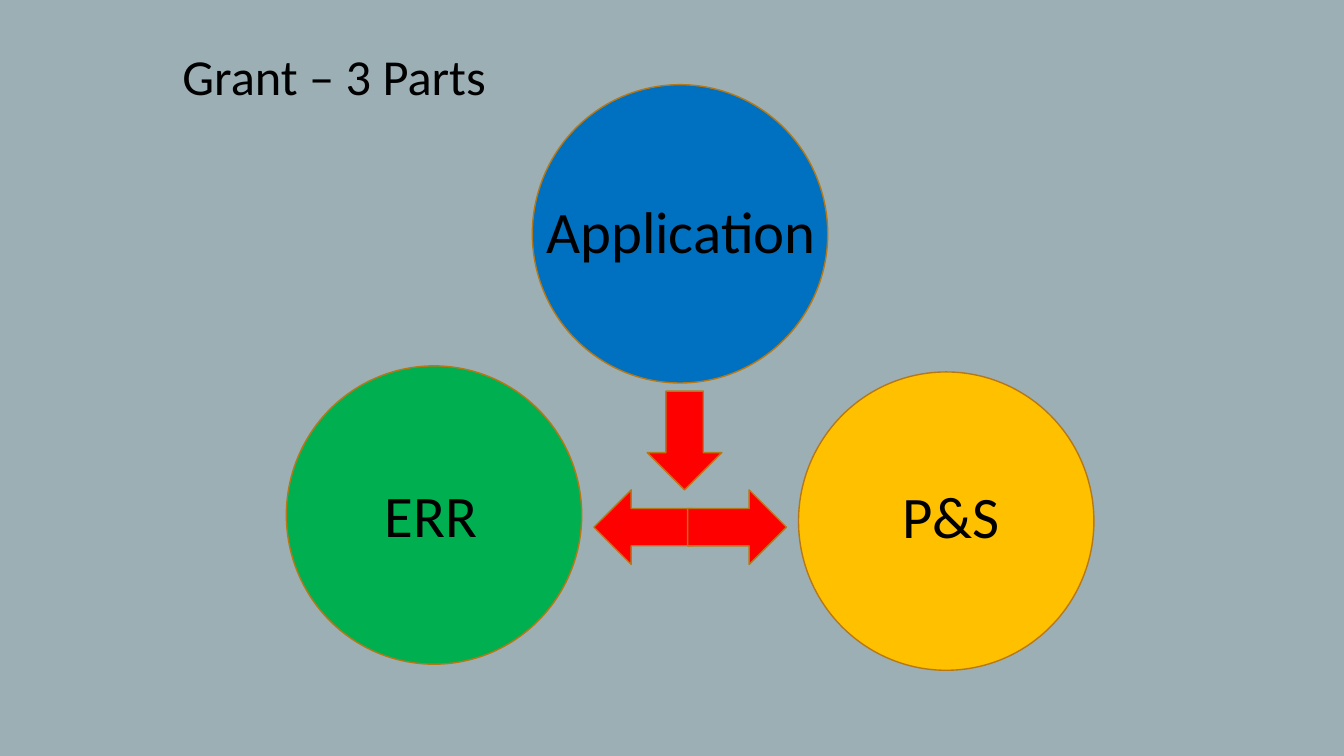
from dataclasses import dataclass

from pptx import Presentation
from pptx.dml.color import RGBColor
from pptx.enum.shapes import MSO_SHAPE
from pptx.enum.text import MSO_ANCHOR, MSO_AUTO_SIZE, PP_ALIGN
from pptx.slide import Slide
from pptx.text.text import TextFrame
from pptx.util import Emu, Pt

EMU_PER_PX = 9144  # 100 px to the inch


@dataclass(frozen=True)
class Theme:
    background: str = "9BAFB5"
    text: str = "000000"
    outline: str = "B67815"
    arrow: str = "FF0000"
    application: str = "0070C0"
    environment: str = "00B050"
    services: str = "FFC000"
    font: str = "Calibri"
    title_size: int = 36
    label_size: int = 42
    outline_width: int = 1


@dataclass(frozen=True)
class Box:
    left: int
    top: int
    width: int
    height: int

    def emu(self) -> tuple[Emu, Emu, Emu, Emu]:
        return (px(self.left), px(self.top), px(self.width), px(self.height))


@dataclass(frozen=True)
class Part:
    label: str
    fill: str
    left: int
    top: int
    label_left: int
    label_top: int


@dataclass(frozen=True)
class Arrow:
    left: int
    top: int
    rotation: int


THEME = Theme()
TITLE = "Grant – 3 Parts"
TITLE_BOX = Box(171, 40, 444, 71)
CIRCLE_SIZE = (293, 296)
LABEL_SIZE = (320, 81)
ARROW_SIZE = (74, 98)

PARTS = (
    Part("Application", THEME.application, 528, 84, 532, 188),
    Part("P&S", THEME.services, 792, 369, 885, 471),
    Part("ERR", THEME.environment, 284, 363, 372, 470),
)
ARROWS = (
    Arrow(642, 388, 0),
    Arrow(601, 474, 90),
    Arrow(694, 474, 270),
)


def px(length: int) -> Emu:
    return Emu(length * EMU_PER_PX)


def write_text(frame: TextFrame, text: str, size: int) -> None:
    frame.word_wrap = True
    frame.auto_size = MSO_AUTO_SIZE.NONE
    frame.vertical_anchor = MSO_ANCHOR.TOP
    paragraph = frame.paragraphs[0]
    paragraph.text = text
    paragraph.alignment = PP_ALIGN.LEFT
    paragraph.font.name = THEME.font
    paragraph.font.size = Pt(size)
    paragraph.font.color.rgb = RGBColor.from_string(THEME.text)


def add_outlined_shape(slide: Slide, kind: MSO_SHAPE, box: Box, fill: str, rotation: int = 0) -> None:
    shape = slide.shapes.add_shape(kind, *box.emu())
    shape.rotation = rotation
    shape.shadow.inherit = False
    shape.fill.solid()
    shape.fill.fore_color.rgb = RGBColor.from_string(fill)
    shape.line.color.rgb = RGBColor.from_string(THEME.outline)
    shape.line.width = Pt(THEME.outline_width)


def add_title(slide: Slide) -> None:
    title = slide.shapes.title
    title.left, title.top, title.width, title.height = TITLE_BOX.emu()
    write_text(title.text_frame, TITLE, THEME.title_size)


def add_part(slide: Slide, part: Part) -> None:
    add_outlined_shape(slide, MSO_SHAPE.OVAL, Box(part.left, part.top, *CIRCLE_SIZE), part.fill)
    label_box = Box(part.label_left, part.label_top, *LABEL_SIZE)
    label = slide.shapes.add_textbox(*label_box.emu())
    write_text(label.text_frame, part.label, THEME.label_size)


def add_arrow(slide: Slide, arrow: Arrow) -> None:
    box = Box(arrow.left, arrow.top, *ARROW_SIZE)
    add_outlined_shape(slide, MSO_SHAPE.DOWN_ARROW, box, THEME.arrow, arrow.rotation)


def main() -> None:
    presentation = Presentation()
    presentation.slide_width, presentation.slide_height = px(1333), px(750)

    # Slide with its background and title
    slide = presentation.slides.add_slide(presentation.slide_layouts.get_by_name("Title Only"))
    slide.background.fill.solid()
    slide.background.fill.fore_color.rgb = RGBColor.from_string(THEME.background)
    add_title(slide)

    # The three parts of the grant
    for part in PARTS:
        add_part(slide, part)

    # Arrows between the parts
    for arrow in ARROWS:
        add_arrow(slide, arrow)

    presentation.save("out.pptx")


if __name__ == "__main__":
    main()
